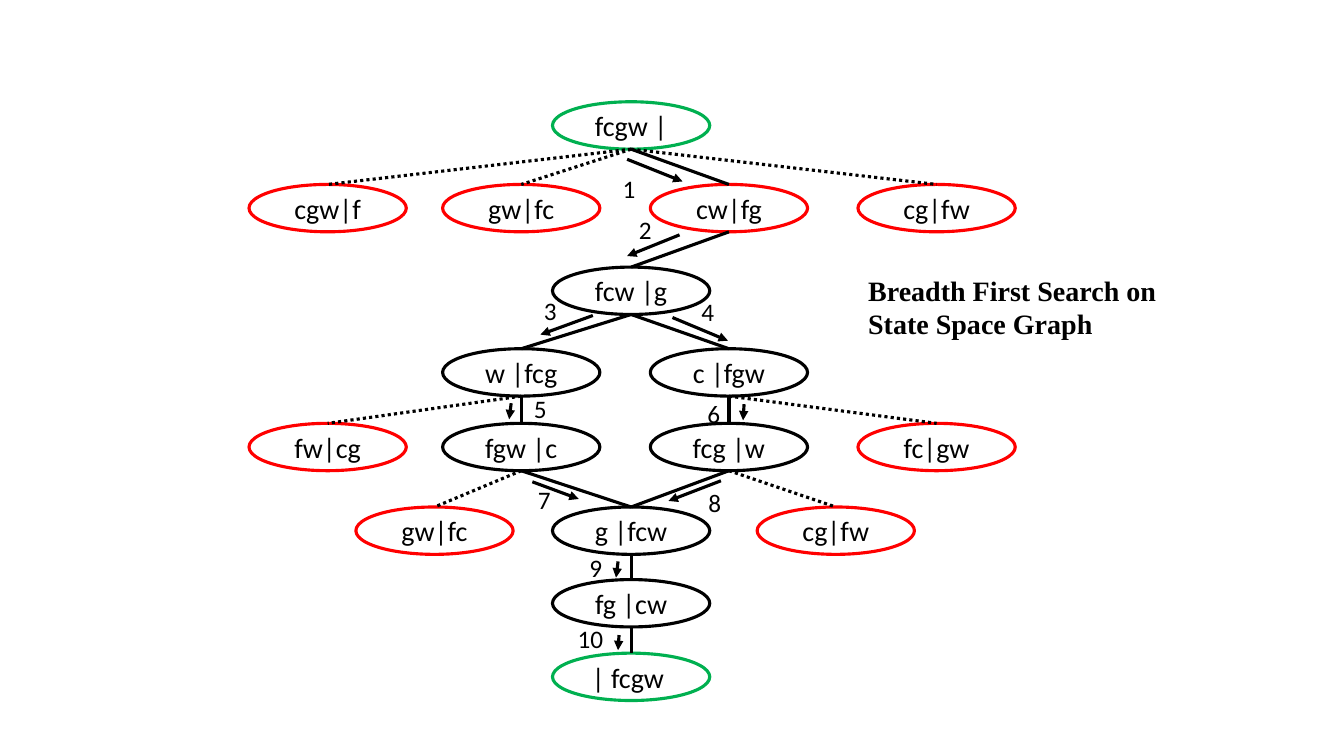
from dataclasses import dataclass

import pptx
import pptx.dml.color
import pptx.enum.dml
import pptx.enum.shapes
import pptx.enum.text
import pptx.oxml.ns
import pptx.oxml.xmlchemy
import pptx.util
from pptx.util import Inches

BLACK, WHITE, RED, GREEN = "000000", "FFFFFF", "FF0000", "00B050"
NODE_WIDTH, NODE_HEIGHT = 1.56, 0.47
LINE_WIDTH = 2.25

COLUMN_LEFT = dict(A=2.47, B=3.53, C=4.39, D=5.48, E=6.45, F=7.51, G=8.51)
ROW_TOP = dict(zip("12345678", (1.01, 1.83, 2.65, 3.46, 4.2, 5.03, 5.75, 6.48)))


@dataclass(frozen=True)
class State:
    cell: str
    text: str
    color: str = BLACK

    @property
    def left(self) -> float:
        return COLUMN_LEFT[self.cell[0]]

    @property
    def top(self) -> float:
        return ROW_TOP[self.cell[1]]


@dataclass(frozen=True)
class Edge:
    parent: str
    child: str
    dotted: bool = False


@dataclass(frozen=True)
class Step:
    """A numbered move: its arrow and the position of its number."""
    number: int
    start: tuple[float, float]
    end: tuple[float, float]
    label: tuple[float, float]


STATES = [
    State("D1", "fcgw |", GREEN),
    State("A2", "cgw|f", RED),
    State("C2", "gw|fc", RED),
    State("E2", "cw|fg", RED),
    State("G2", "cg|fw", RED),
    State("D3", "fcw |g"),
    State("C4", "w |fcg"),
    State("E4", "c |fgw"),
    State("A5", "fw|cg", RED),
    State("G5", "fc|gw", RED),
    State("C5", "fgw |c"),
    State("E5", "fcg |w"),
    State("B6", "gw|fc", RED),
    State("D6", "g |fcw"),
    State("F6", "cg|fw", RED),
    State("D7", "fg |cw"),
    State("D8", "| fcgw ", GREEN),
]

EDGES = [
    Edge("D1", "E2"),
    Edge("D3", "E4"),
    Edge("E2", "D3"),
    Edge("D3", "C4"),
    Edge("E5", "D6"),
    Edge("C5", "D6"),
    Edge("C4", "C5"),
    Edge("E4", "E5"),
    Edge("D6", "D7"),
    Edge("D7", "D8"),
    Edge("D1", "G2", dotted=True),
    Edge("D1", "A2", dotted=True),
    Edge("D1", "C2", dotted=True),
    Edge("C4", "A5", dotted=True),
    Edge("C5", "B6", dotted=True),
    Edge("E4", "G5", dotted=True),
    Edge("E5", "F6", dotted=True),
]

STEPS = [
    Step(1, (6.22, 1.58), (6.77, 1.8), (5.98, 1.67)),
    Step(2, (6.74, 2.33), (6.22, 2.54), (6.14, 2.08)),
    Step(3, (5.88, 3.13), (5.36, 3.32), (5.2, 2.88)),
    Step(4, (6.67, 3.15), (7.22, 3.38), (6.76, 2.89)),
    Step(5, (5.07, 4), (5.05, 4.16), (5.1, 3.85)),
    Step(6, (7.38, 4.01), (7.37, 4.17), (6.82, 3.9)),
    Step(7, (5.28, 4.78), (5.74, 4.95), (5.14, 4.76)),
    Step(8, (7.15, 4.77), (6.63, 4.97), (6.83, 4.79)),
    Step(9, (6.13, 5.57), (6.11, 5.73), (5.65, 5.43)),
    Step(10, (6.14, 6.3), (6.13, 6.45), (5.62, 6.13)),
]


def rgb(color: str) -> pptx.dml.color.RGBColor:
    return pptx.dml.color.RGBColor.from_string(color)


def write(shape, text: str, size: int, alignment, font: str = "Calibri", bold: bool = False):
    shape.text_frame.word_wrap = True
    paragraph = shape.text_frame.paragraphs[0]
    paragraph.alignment = alignment
    run = paragraph.add_run()
    run.text = text
    run.font.name = font
    run.font.size = pptx.util.Pt(size)
    run.font.bold = bold
    run.font.color.rgb = rgb(BLACK)
    return paragraph


def draw_state(slide, state: State):
    shape = slide.shapes.add_shape(
        pptx.enum.shapes.MSO_SHAPE.OVAL, Inches(state.left), Inches(state.top),
        Inches(NODE_WIDTH), Inches(NODE_HEIGHT))
    shape.shadow.inherit = False
    shape.fill.solid()
    shape.fill.fore_color.rgb = rgb(WHITE)
    shape.line.color.rgb = rgb(state.color)
    shape.line.width = pptx.util.Pt(LINE_WIDTH)
    shape.text_frame.vertical_anchor = pptx.enum.text.MSO_ANCHOR.MIDDLE
    paragraph = write(shape, state.text, 20, pptx.enum.text.PP_ALIGN.CENTER)
    paragraph.space_after = pptx.util.Pt(8)
    return shape


def draw_line(slide, start: tuple[float, float], end: tuple[float, float]):
    line = slide.shapes.add_connector(
        pptx.enum.shapes.MSO_CONNECTOR.STRAIGHT, *map(Inches, start + end))
    line.line.color.rgb = rgb(BLACK)
    line.line.width = pptx.util.Pt(LINE_WIDTH)
    line.element.spPr.append(pptx.oxml.xmlchemy.OxmlElement("a:effectLst"))
    return line


def draw_edge(slide, edge: Edge, states: dict[str, State], shapes: dict) -> None:
    """Run from the parent's bottom to the child's top."""
    parent, child = states[edge.parent], states[edge.child]
    line = draw_line(slide, (parent.left + NODE_WIDTH / 2, parent.top + NODE_HEIGHT),
                     (child.left + NODE_WIDTH / 2, child.top))
    line.end_connect(shapes[edge.child], 0)
    if edge.dotted:
        line.line.dash_style = pptx.enum.dml.MSO_LINE.ROUND_DOT


def draw_step(slide, step: Step) -> None:
    arrow = draw_line(slide, step.start, step.end)
    tail = pptx.oxml.xmlchemy.OxmlElement("a:tailEnd")
    tail.set("type", "triangle")
    arrow.element.spPr.find(pptx.oxml.ns.qn("a:ln")).append(tail)
    width = 0.42 if step.number < 10 else 0.46
    label = slide.shapes.add_textbox(*map(Inches, step.label), Inches(width), Inches(0.4))
    write(label, str(step.number), 18, pptx.enum.text.PP_ALIGN.RIGHT)


def write_title(slide) -> None:
    title = slide.shapes.title
    title.left, title.top, title.width, title.height = map(Inches, (8.51, 2.66, 3.53, 0.77))
    title.text_frame.vertical_anchor = pptx.enum.text.MSO_ANCHOR.TOP
    title.text_frame.auto_size = pptx.enum.text.MSO_AUTO_SIZE.NONE
    write(title, "Breadth First Search on State Space Graph", 20,
          pptx.enum.text.PP_ALIGN.LEFT, "Times New Roman", bold=True)


def main() -> None:
    presentation = pptx.Presentation()
    presentation.slide_width, presentation.slide_height = Inches(13.33), Inches(7.5)
    slide = presentation.slides.add_slide(presentation.slide_layouts.get_by_name("Title Only"))
    write_title(slide)
    states = {state.cell: state for state in STATES}
    shapes = {state.cell: draw_state(slide, state) for state in STATES}
    for edge in EDGES:
        draw_edge(slide, edge, states, shapes)
    for step in STEPS:
        draw_step(slide, step)
    presentation.save("out.pptx")


if __name__ == "__main__":
    main()
